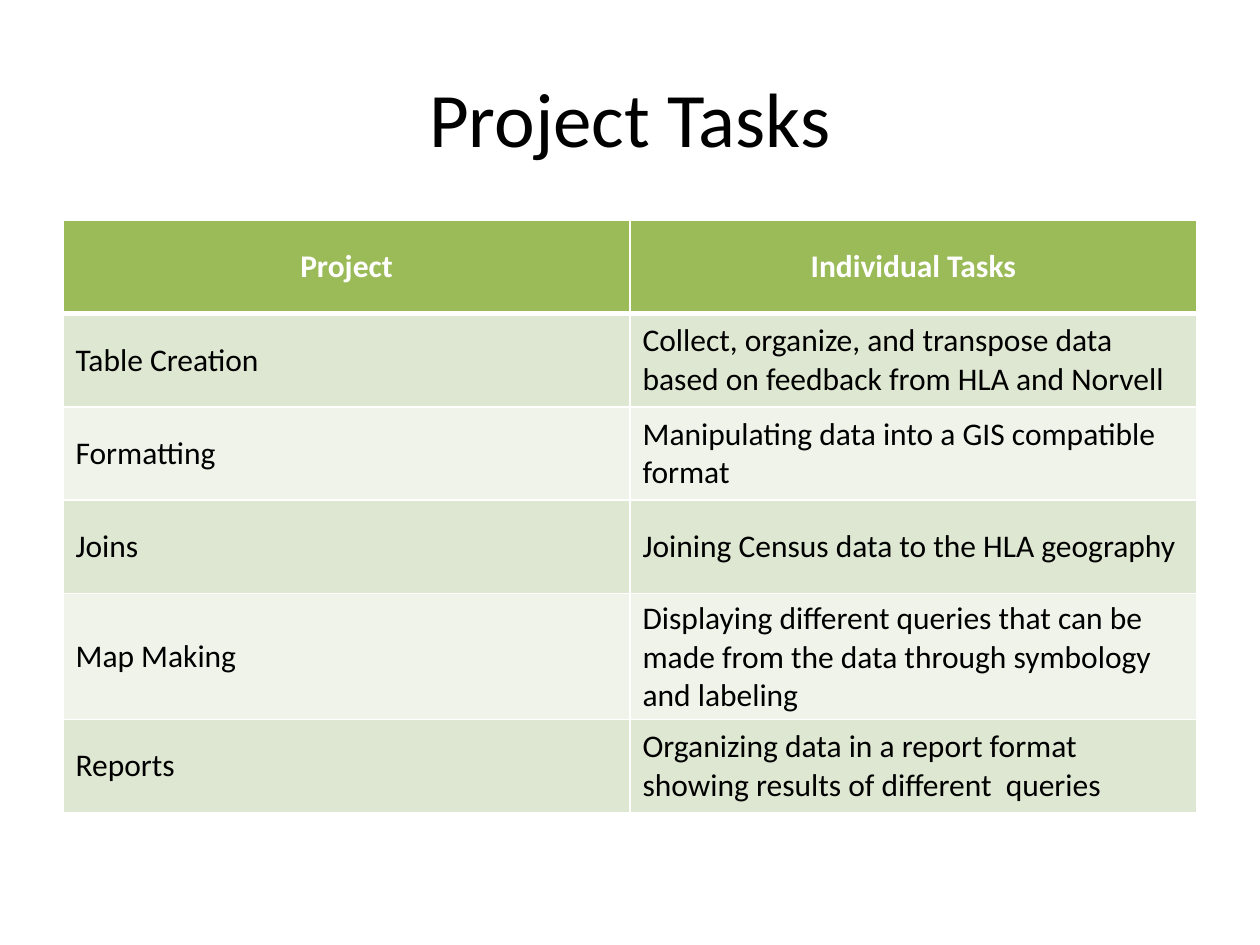
from dataclasses import dataclass

from lxml.etree import SubElement
from pptx import Presentation
from pptx.dml.color import RGBColor
from pptx.enum.text import MSO_ANCHOR as Anchor, PP_ALIGN as Align
from pptx.oxml.ns import qn
from pptx.util import Inches, Pt

WHITE, BLACK, GREEN = "FFFFFF", "000000", "9BBB59"
BANDS = ("DEE7D1", "EFF3EA")
ROW_HEIGHT = 0.74


@dataclass(frozen=True)
class Task:
    project: str
    details: str


HEADINGS = Task("Project", "Individual Tasks")
TASKS = [
    Task("Table Creation",
         "Collect, organize, and transpose data based on feedback from HLA and Norvell"),
    Task("Formatting", "Manipulating data into a GIS compatible format"),
    Task("Joins", "Joining Census data to the HLA geography"),
    Task("Map Making",
         "Displaying different queries that can be made from the data "
         "through symbology and labeling"),
    Task("Reports",
         "Organizing data in a report format showing results of different  queries"),
]


def rgb(value: str) -> RGBColor:
    return RGBColor.from_string(value)


def write(frame, text: str, *, size: int = 18, color: str = BLACK,
          bold: bool = False, align=Align.LEFT) -> None:
    frame.word_wrap = True
    paragraph = frame.paragraphs[0]
    paragraph.alignment = align
    run = paragraph.add_run()
    run.text = text
    run.font.name = "Calibri"
    run.font.size = Pt(size)
    run.font.bold = bold
    run.font.color.rgb = rgb(color)


def add_borders(cell, widths: dict[str, int]) -> None:
    properties = cell._tc.get_or_add_tcPr()
    for position, (side, width) in enumerate(widths.items()):
        border = SubElement(properties, qn(f"a:ln{side}"), w=str(Pt(width)))
        fill = SubElement(border, qn("a:solidFill"))
        SubElement(fill, qn("a:srgbClr"), val=WHITE)
        properties.insert(position, border)


def draw_row(table, index: int, task: Task) -> None:
    heading = index == 0
    table.rows[index].height = Inches(ROW_HEIGHT)
    for column, text in enumerate((task.project, task.details)):
        cell = table.cell(index, column)
        cell.vertical_anchor = Anchor.MIDDLE
        cell.fill.solid()
        cell.fill.fore_color.rgb = rgb(GREEN if heading else BANDS[(index - 1) % 2])
        add_borders(cell, {"L": 1, "R": 1, "T": 3 if index == 1 else 1,
                           "B": 3 if heading else 1})
        write(cell.text_frame, text, color=WHITE if heading else BLACK,
              bold=heading, align=Align.CENTER if heading else Align.LEFT)


def main() -> None:
    deck = Presentation()
    deck.slide_width, deck.slide_height = Inches(10), Inches(7.5)
    slide = deck.slides.add_slide(deck.slide_layouts[6])

    title = slide.shapes.add_textbox(Inches(0.5), Inches(0.3), Inches(9), Inches(1.25))
    title.text_frame.vertical_anchor = Anchor.MIDDLE
    write(title.text_frame, "Project Tasks", size=44, align=Align.CENTER)

    rows = [HEADINGS, *TASKS]
    tasks = slide.shapes.add_table(
        len(rows), 2, Inches(0.5), Inches(1.75), Inches(9),
        Inches(ROW_HEIGHT * len(rows))).table
    for index, task in enumerate(rows):
        draw_row(tasks, index, task)

    deck.save("out.pptx")


if __name__ == "__main__":
    main()
